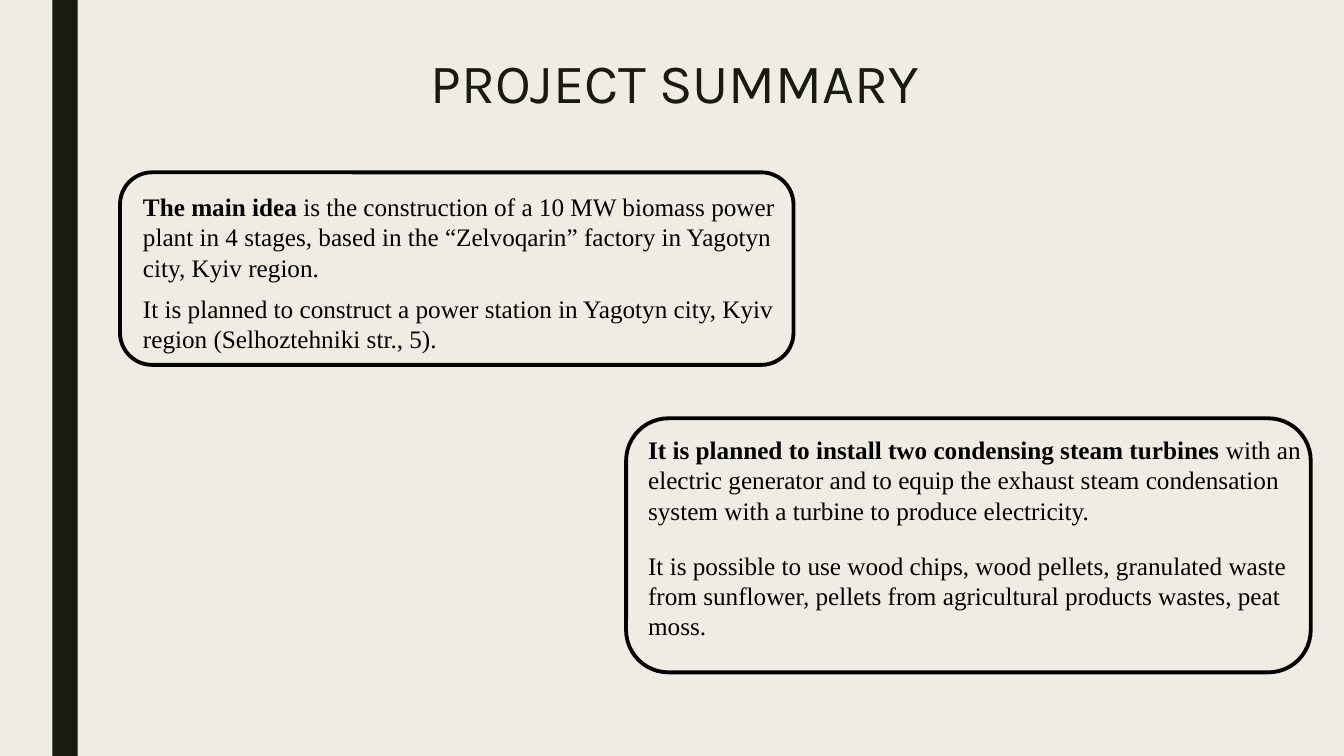
from dataclasses import dataclass

from pptx import Presentation
from pptx.dml.color import RGBColor
from pptx.enum.shapes import MSO_SHAPE
from pptx.enum.text import MSO_ANCHOR, MSO_AUTO_SIZE, PP_ALIGN
from pptx.slide import Slide
from pptx.text.text import _Paragraph
from pptx.util import Inches, Pt

CREAM = RGBColor(0xEF, 0xED, 0xE3)
DARK_OLIVE = RGBColor(0x19, 0x1B, 0x0E)
BLACK = RGBColor(0x00, 0x00, 0x00)
TITLE_FONT = "Karla"
BODY_FONT = "Times New Roman"


@dataclass(frozen=True)
class Box:
    left: float
    top: float
    width: float
    height: float

    def lengths(self) -> tuple[int, int, int, int]:
        return (Inches(self.left), Inches(self.top),
                Inches(self.width), Inches(self.height))


@dataclass(frozen=True)
class Passage:
    box: Box
    lead: str
    text: str


@dataclass(frozen=True)
class Panel:
    frame: Box
    passages: tuple[Passage, ...]


PANELS = (
    Panel(Box(1.19, 1.71, 6.68, 1.91), (
        Passage(Box(1.32, 1.85, 6.67, 1.01), "The main idea ",
                "is the construction of a 10 MW biomass power plant in 4 stages, "
                "based in the “Zelvoqarin” factory in Yagotyn city, Kyiv region."),
        Passage(Box(1.32, 2.86, 6.67, 0.71), "",
                "It is planned to construct a power station in Yagotyn city, "
                "Kyiv region (Selhoztehniki str., 5)."),
    )),
    Panel(Box(6.21, 4.15, 6.79, 2.52), (
        Passage(Box(6.33, 4.26, 6.67, 1.01),
                "It is planned to install two condensing steam turbines ",
                "with an electric generator and to equip the exhaust steam "
                "condensation system with a turbine to produce electricity."),
        Passage(Box(6.33, 5.41, 6.67, 1.01), "",
                "It is possible to use wood chips, wood pellets, granulated waste "
                "from sunflower, pellets from agricultural products wastes, peat moss."),
    )),
)


def add_run(paragraph: _Paragraph, text: str, font_name: str, size: float,
            color: RGBColor, bold: bool = False) -> None:
    run = paragraph.add_run()
    run.text = text
    run.font.name = font_name
    run.font.size = Pt(size)
    run.font.bold = bold
    run.font.color.rgb = color


def add_side_bar(slide: Slide) -> None:
    bar = slide.shapes.add_shape(MSO_SHAPE.RECTANGLE, *Box(0.52, 0, 0.25, 7.5).lengths())
    bar.shadow.inherit = False
    bar.fill.solid()
    bar.fill.fore_color.rgb = DARK_OLIVE
    bar.line.fill.background()


def format_title(slide: Slide, text: str) -> None:
    title = slide.shapes.title
    title.left, title.top, title.width, title.height = Box(4.17, 0.51, 5.67, 0.95).lengths()
    frame = title.text_frame
    frame.auto_size = MSO_AUTO_SIZE.NONE
    frame.vertical_anchor = MSO_ANCHOR.TOP
    paragraph = frame.paragraphs[0]
    paragraph.alignment = PP_ALIGN.LEFT
    paragraph.line_spacing = 0.89
    add_run(paragraph, text, TITLE_FONT, 39.6, DARK_OLIVE)


def add_passage(slide: Slide, passage: Passage) -> None:
    text_box = slide.shapes.add_textbox(*passage.box.lengths())
    frame = text_box.text_frame
    frame.word_wrap = True
    frame.auto_size = MSO_AUTO_SIZE.SHAPE_TO_FIT_TEXT
    paragraph = frame.paragraphs[0]
    if passage.lead:
        add_run(paragraph, passage.lead, BODY_FONT, 18, BLACK, bold=True)
    add_run(paragraph, passage.text, BODY_FONT, 18, BLACK)


def add_panel(slide: Slide, panel: Panel) -> None:
    for passage in panel.passages:
        add_passage(slide, passage)
    outline = slide.shapes.add_shape(MSO_SHAPE.ROUNDED_RECTANGLE, *panel.frame.lengths())
    outline.shadow.inherit = False
    outline.fill.background()
    outline.line.color.rgb = BLACK
    outline.line.width = Pt(2.75)


def main() -> None:
    presentation = Presentation()
    presentation.slide_width = Inches(13.33)
    presentation.slide_height = Inches(7.5)

    # Title Only layout on a cream background
    slide = presentation.slides.add_slide(presentation.slide_layouts[5])
    slide.background.fill.solid()
    slide.background.fill.fore_color.rgb = CREAM

    # Heading and side bar
    add_side_bar(slide)
    format_title(slide, "PROJECT SUMMARY")

    # Outlined text panels
    for panel in PANELS:
        add_panel(slide, panel)

    presentation.save("out.pptx")


if __name__ == "__main__":
    main()
